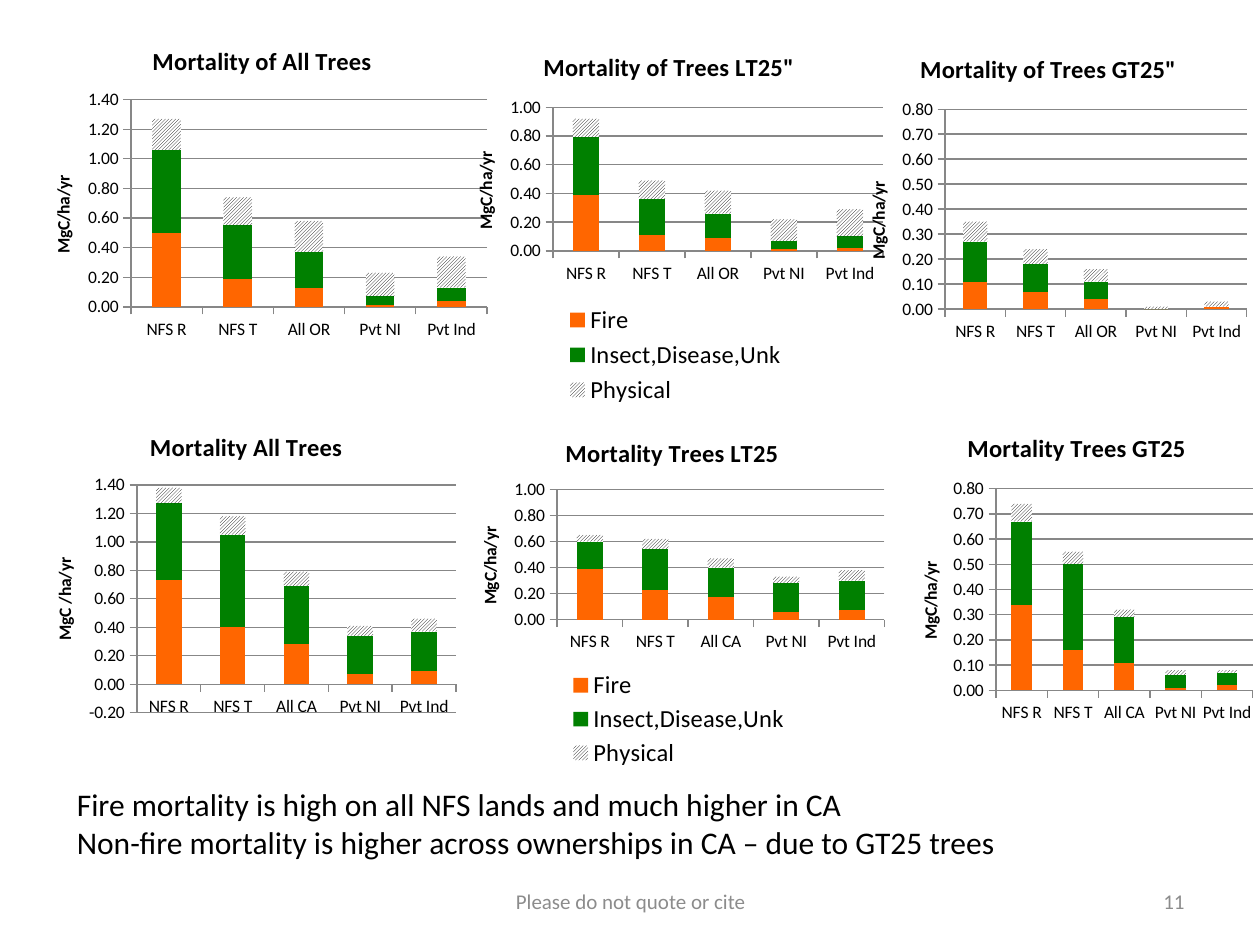
from lxml.etree import SubElement
from pptx import Presentation
from pptx.chart.data import CategoryChartData
from pptx.dml.color import RGBColor
from pptx.enum.chart import XL_CHART_TYPE, XL_LEGEND_POSITION, XL_TICK_MARK
from pptx.enum.dml import MSO_PATTERN
from pptx.enum.text import MSO_ANCHOR, PP_ALIGN
from pptx.oxml.ns import qn
from pptx.util import Cm, Pt

FONT = "Calibri"
BLACK, WHITE, GREY, LINE = "000000", "FFFFFF", "8C8C8C", "878787"
FIRE, INSECT = "FF6600", "008000"
CAUSES = ["Fire", "Insect,Disease,Unk", "Physical"]

# Per chart: title, axis title, box in cm, plot area as fractions of the box,
# axis minimum, maximum and step, legend top (or None), values per cause
OREGON = [
    ("Mortality of All Trees", "MgC/ha/yr", (0.56, 0.53, 9.45, 6.43),
     (0.22, 0.23, 0.76, 0.65), (0, 1.4, 0.2), None,
     [(0.5, 0.19, 0.13, 0.01, 0.04), (0.56, 0.36, 0.24, 0.06, 0.09),
      (0.21, 0.19, 0.21, 0.16, 0.21)]),
    ('Mortality of Trees LT25"', "MgC/ha/yr", (8.99, 0.64, 8.99, 7.62),
     (0.24, 0.2, 0.74, 0.38), (0, 1, 0.2), 0.71,
     [(0.39, 0.11, 0.09, 0.01, 0.02), (0.4, 0.25, 0.17, 0.06, 0.08),
      (0.13, 0.13, 0.16, 0.15, 0.19)]),
    ('Mortality of Trees GT25"', "MgC/ha/yr", (16.97, 0.69, 8.33, 6.3),
     (0.25, 0.24, 0.73, 0.64), (0, 0.8, 0.1), None,
     [(0.11, 0.07, 0.04, 0, 0.01), (0.16, 0.11, 0.07, 0, 0),
      (0.08, 0.06, 0.05, 0.01, 0.02)]),
]
CALIFORNIA = [
    ("Mortality All Trees", "MgC /ha/yr", (0.56, 8.31, 8.81, 6.38),
     (0.25, 0.23, 0.73, 0.72), (-0.2, 1.4, 0.2), None,
     [(0.73, 0.4, 0.28, 0.07, 0.09), (0.54, 0.65, 0.41, 0.27, 0.28),
      (0.11, 0.13, 0.1, 0.07, 0.09)]),
    ("Mortality Trees LT25", "MgC/ha/yr", (9.09, 8.41, 8.92, 7.29),
     (0.24, 0.2, 0.74, 0.36), (0, 1, 0.2), 0.69,
     [(0.39, 0.23, 0.17, 0.06, 0.07), (0.21, 0.31, 0.23, 0.22, 0.23),
      (0.05, 0.08, 0.07, 0.05, 0.08)]),
    ("Mortality Trees GT25", "MgC/ha/yr", (18.01, 8.33, 7.39, 6.35),
     (0.28, 0.24, 0.7, 0.64), (0, 0.8, 0.1), None,
     [(0.34, 0.16, 0.11, 0.01, 0.02), (0.33, 0.34, 0.18, 0.05, 0.05),
      (0.07, 0.05, 0.03, 0.02, 0.01)]),
]


def color(hex_string):
    return RGBColor.from_string(hex_string)


def set_font(font, size, hex_string=BLACK, bold=False):
    font.name = FONT
    font.size = Pt(size)
    font.bold = bold
    font.color.rgb = color(hex_string)


def set_title(owner, text, size):
    """Give a chart title or an axis title its text in bold."""
    owner.text_frame.text = text
    set_font(owner.text_frame.paragraphs[0].runs[0].font, size, bold=True)


def place(element, fractions, index, inner=False):
    """Fix a plot area or legend at fractions of the chart box."""
    for old in element.findall(qn("c:layout")):
        element.remove(old)
    layout = SubElement(element, qn("c:layout"))
    element.insert(index, layout)
    manual = SubElement(layout, qn("c:manualLayout"))
    settings = [("layoutTarget", "inner")] if inner else []
    settings += [("xMode", "edge"), ("yMode", "edge")]
    settings += zip("xywh", fractions)
    for name, value in settings:
        SubElement(manual, qn(f"c:{name}")).set("val", str(value))


def style_axes(chart, axis_title, scale):
    value_axis, category_axis = chart.value_axis, chart.category_axis
    value_axis.minimum_scale, value_axis.maximum_scale, value_axis.major_unit = scale
    value_axis.tick_labels.number_format = "0.00"
    value_axis.tick_labels.number_format_is_linked = False
    value_axis.has_major_gridlines = True
    set_title(value_axis.axis_title, axis_title, 10)
    for axis in (value_axis, category_axis):
        axis.major_tick_mark = XL_TICK_MARK.OUTSIDE
        axis.minor_tick_mark = XL_TICK_MARK.NONE
    for line in (value_axis.format.line, category_axis.format.line,
                 value_axis.major_gridlines.format.line):
        line.color.rgb = color(LINE)
        line.width = Pt(0.75)


def fill_series(plot):
    plot.gap_width, plot.overlap = 150, 100
    plot.vary_by_categories = False
    fire, insect, physical = (series.format.fill for series in plot.series)
    for fill, hex_string in ((fire, FIRE), (insect, INSECT)):
        fill.solid()
        fill.fore_color.rgb = color(hex_string)
    physical.patterned()
    physical.pattern = MSO_PATTERN.LIGHT_UPWARD_DIAGONAL
    physical.fore_color.rgb = color(BLACK)
    physical.back_color.rgb = color(WHITE)


def add_legend(chart, top):
    chart.has_legend = True
    chart.legend.position = XL_LEGEND_POSITION.BOTTOM
    chart.legend.include_in_layout = False
    set_font(chart.legend.font, 14)
    place(chart.legend._element, (0.24, top, 0.55, 0.29), 1)


def add_mortality_chart(page, state, title, axis_title, box, plot_area, scale,
                        legend_top, values):
    data = CategoryChartData(number_format="0.00")
    data.categories = ["NFS R", "NFS T", f"All {state}", "Pvt NI", "Pvt Ind"]
    for cause, numbers in zip(CAUSES, values):
        data.add_series(cause, numbers)
    chart = page.shapes.add_chart(
        XL_CHART_TYPE.COLUMN_STACKED, *map(Cm, box), data).chart
    set_font(chart.font, 10)
    set_title(chart.chart_title, title, 14)
    chart.chart_title.include_in_layout = False
    style_axes(chart, axis_title, scale)
    fill_series(chart.plots[0])
    place(chart._chartSpace.chart.plotArea, plot_area, 0, inner=True)
    chart.has_legend = False
    if legend_top:
        add_legend(chart, legend_top)


def add_text(page, box, lines, size, hex_string=BLACK, align=PP_ALIGN.LEFT,
             anchor=MSO_ANCHOR.TOP):
    frame = page.shapes.add_textbox(*map(Cm, box)).text_frame
    frame.word_wrap = True
    frame.vertical_anchor = anchor
    frame.text = "\n".join(lines)
    for paragraph in frame.paragraphs:
        paragraph.alignment = align
        set_font(paragraph.runs[0].font, size, hex_string)


def main():
    deck = Presentation()
    deck.slide_width, deck.slide_height = Cm(25.4), Cm(19.05)
    page = deck.slides.add_slide(deck.slide_layouts[6])
    for state, charts in (("CA", CALIFORNIA), ("OR", OREGON)):
        for chart in charts:
            add_mortality_chart(page, state, *chart)
    add_text(page, (1.3, 15.7, 23.01, 1.8), [
        "Fire mortality is high on all NFS lands and much higher in CA",
        "Non-fire mortality is higher across ownerships in CA – due to GT25 trees",
    ], 18)
    add_text(page, (8.69, 17.65, 8.05, 1.02), ["Please do not quote or cite"],
             12, GREY, PP_ALIGN.CENTER, MSO_ANCHOR.MIDDLE)
    add_text(page, (18.21, 17.65, 5.92, 1.02), ["11"],
             12, GREY, PP_ALIGN.RIGHT, MSO_ANCHOR.MIDDLE)
    deck.save("out.pptx")


if __name__ == "__main__":
    main()
